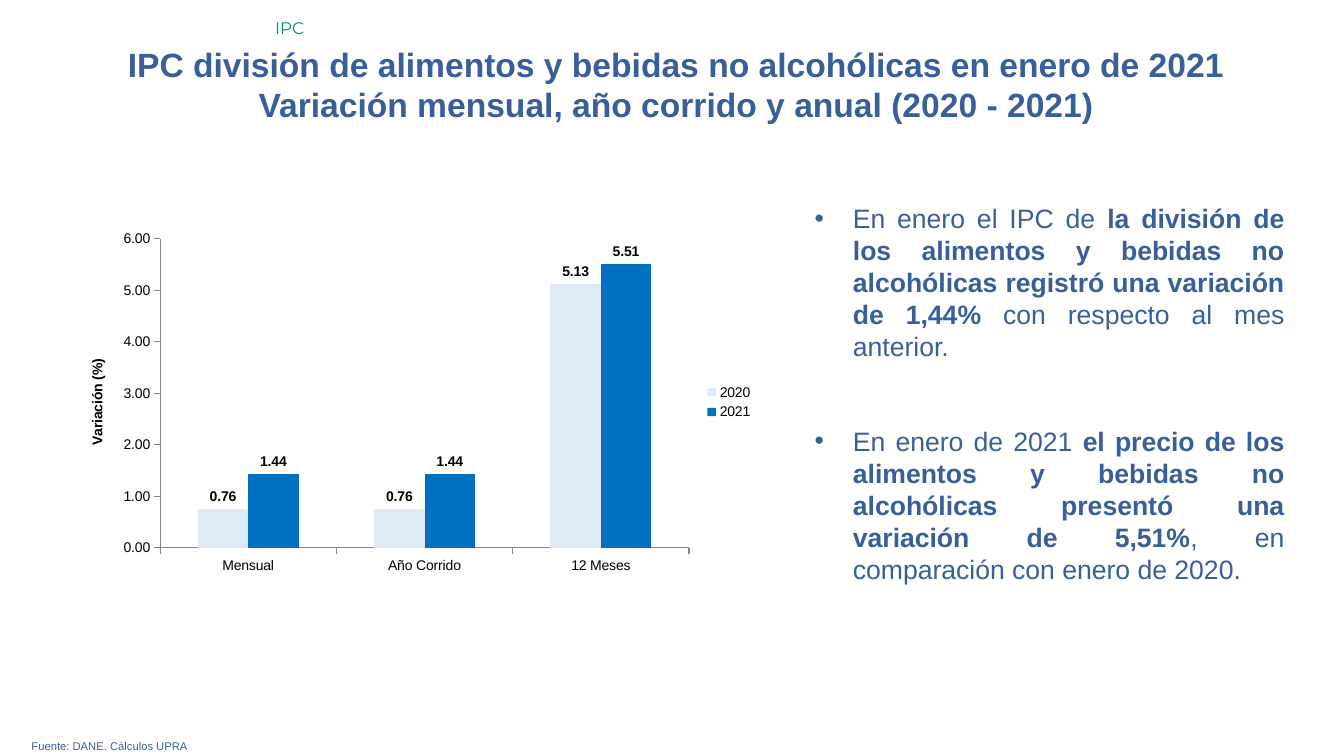
import dataclasses

import lxml.etree
import pptx
import pptx.chart.data
import pptx.dml.color
import pptx.enum.chart
import pptx.enum.text
import pptx.oxml.ns
import pptx.util

ALIGN = pptx.enum.text.PP_ALIGN
ANCHOR = pptx.enum.text.MSO_ANCHOR
WIDTH = pptx.util.Inches(13.33)
HEIGHT = pptx.util.Inches(7.5)
GRID = 100


@dataclasses.dataclass(frozen=True)
class Theme:
    font: str = "Arial"
    section_font: str = "Montserrat"
    blue: str = "395F9B"
    green: str = "009267"
    black: str = "000000"
    axis_grey: str = "868686"
    series: tuple = ("DEEBF7", "0070C0")
    title_size: int = 24
    body_size: int = 19
    section_size: int = 12
    chart_size: int = 10
    source_size: int = 8


THEME = Theme()


def place(column, row, columns, rows):
    return {
        "left": round(WIDTH * column / GRID),
        "top": round(HEIGHT * row / GRID),
        "width": round(WIDTH * columns / GRID),
        "height": round(HEIGHT * rows / GRID),
    }


def apply(target, values):
    for name, value in values.items():
        setattr(target, name, value)


def format_font(font, size, color, name=THEME.font, bold=False):
    apply(font, {"size": pptx.util.Pt(size), "name": name, "bold": bold})
    font.color.rgb = pptx.dml.color.RGBColor.from_string(color)


def add_bullet(paragraph):
    properties = paragraph._p.get_or_add_pPr()
    indent = pptx.util.Inches(0.38)
    properties.set("marL", str(indent))
    properties.set("indent", str(-indent))
    for tag, attribute, value in (("a:buFont", "typeface", THEME.font), ("a:buChar", "char", "•")):
        element = lxml.etree.SubElement(properties, pptx.oxml.ns.qn(tag))
        element.set(attribute, value)


def write_text(shape, box, paragraphs, size, color, alignment, name=THEME.font,
               anchor=ANCHOR.TOP, bulleted=False, gap=0):
    apply(shape, box)
    frame = shape.text_frame
    apply(frame, {
        "word_wrap": True,
        "auto_size": pptx.enum.text.MSO_AUTO_SIZE.NONE,
        "vertical_anchor": anchor,
    })
    for index, runs in enumerate(paragraphs):
        paragraph = frame.add_paragraph() if index else frame.paragraphs[0]
        apply(paragraph, {
            "alignment": alignment,
            "space_before": pptx.util.Pt(gap if index else 0),
        })
        if bulleted:
            add_bullet(paragraph)
        for text, bold in runs:
            run = paragraph.add_run()
            run.text = text
            format_font(run.font, size, color, name, bold)


def add_label(slide, box, text, size, color, alignment, name=THEME.font):
    shape = slide.shapes.add_textbox(**box)
    write_text(shape, box, [[(text, False)]], size, color, alignment, name)


def format_axis(axis):
    apply(axis, {
        "has_major_gridlines": False,
        "major_tick_mark": pptx.enum.chart.XL_TICK_MARK.OUTSIDE,
        "minor_tick_mark": pptx.enum.chart.XL_TICK_MARK.NONE,
    })
    format_font(axis.tick_labels.font, THEME.chart_size, THEME.black)
    line = axis.format.line
    line.width = pptx.util.Pt(0.75)
    line.color.rgb = pptx.dml.color.RGBColor.from_string(THEME.axis_grey)


def add_column_chart(slide, box, categories, series_values, axis_title):
    number_format = "#,##0.00"
    data = pptx.chart.data.CategoryChartData(number_format=number_format)
    data.categories = categories
    for name, values in series_values.items():
        data.add_series(name, values)
    chart = slide.shapes.add_chart(
        pptx.enum.chart.XL_CHART_TYPE.COLUMN_CLUSTERED,
        box["left"], box["top"], box["width"], box["height"], data).chart
    apply(chart, {"has_title": False, "has_legend": True})
    format_font(chart.font, THEME.chart_size, THEME.black)
    apply(chart.legend, {
        "position": pptx.enum.chart.XL_LEGEND_POSITION.RIGHT,
        "include_in_layout": False,
    })

    format_axis(chart.category_axis)
    axis = chart.value_axis
    format_axis(axis)
    apply(axis, {"minimum_scale": 0, "maximum_scale": 6, "major_unit": 1})
    apply(axis.tick_labels, {"number_format": number_format, "number_format_is_linked": False})
    run = axis.axis_title.text_frame.paragraphs[0].add_run()
    run.text = axis_title
    format_font(run.font, THEME.chart_size, THEME.black, bold=True)

    plot = chart.plots[0]
    apply(plot, {"gap_width": 150, "overlap": 0, "vary_by_categories": False})
    for series, color in zip(plot.series, THEME.series):
        series.format.fill.solid()
        series.format.fill.fore_color.rgb = pptx.dml.color.RGBColor.from_string(color)
        labels = series.data_labels
        apply(labels, {
            "show_value": True,
            "number_format": number_format,
            "number_format_is_linked": False,
            "position": pptx.enum.chart.XL_LABEL_POSITION.OUTSIDE_END,
        })
        format_font(labels.font, THEME.chart_size, THEME.black, bold=True)


def main():
    presentation = pptx.Presentation()
    apply(presentation, {"slide_width": WIDTH, "slide_height": HEIGHT})
    slide = presentation.slides.add_slide(presentation.slide_layouts[1])
    title, body = slide.placeholders

    write_text(title, place(3.4, 5.1, 93.8, 12.1), [
        [("IPC división de alimentos y bebidas no alcohólicas en enero de 2021", True)],
        [("Variación mensual, año corrido y anual (2020 - 2021)", True)],
    ], THEME.title_size, THEME.blue, ALIGN.CENTER)
    write_text(body, place(59.86, 26.1, 36.46, 56.8), [
        [("En enero el IPC de ", False),
         ("la división de los alimentos y bebidas no alcohólicas registró una variación de 1,44% ", True),
         ("con respecto al mes anterior.", False)],
        [("En enero de 2021 ", False),
         ("el precio de los alimentos y bebidas no alcohólicas presentó una variación de 5,51%", True),
         (", en comparación con enero de 2020.", False)],
    ], THEME.body_size, THEME.blue, ALIGN.JUSTIFY, bulleted=True, gap=45)
    add_label(slide, place(1.6, 97.2, 96.8, 3.2), "Fuente: DANE. Cálculos UPRA",
              THEME.source_size, THEME.blue, ALIGN.JUSTIFY)
    add_label(slide, place(19.73, 1.7, 80.27, 4), "IPC",
              THEME.section_size, THEME.green, ALIGN.LEFT, THEME.section_font)
    add_column_chart(slide, place(5.03, 29.6, 51.76, 47.2),
                     ("Mensual", "Año Corrido", "12 Meses"),
                     {"2020": (0.76, 0.76, 5.13), "2021": (1.44, 1.44, 5.51)},
                     "Variación (%)")
    presentation.save("out.pptx")


if __name__ == "__main__":
    main()
